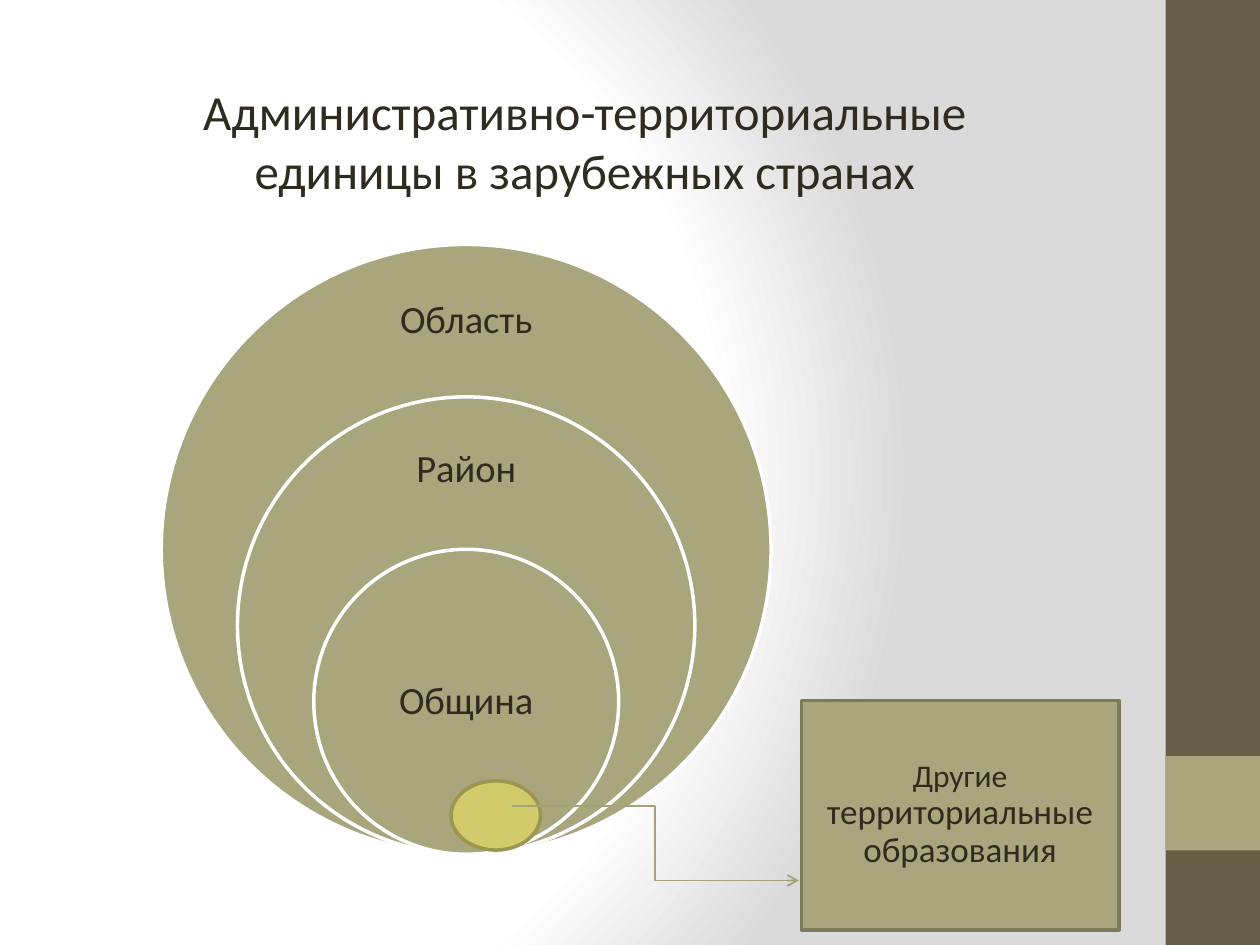
"""Slide with nested circles of administrative units and a linked note."""
from pptx import Presentation
from pptx import util as u
from pptx.dml.color import RGBColor
from pptx.enum import shapes, text
from pptx.oxml import parse_xml
from pptx.oxml.ns import nsdecls, qn

COLS, ROWS = 100, 75
OLIVE, DARK, WHITE, INK = "A9A57C", "675E47", "FFFFFF", "2F2B20"
RECT, OVAL = shapes.MSO_SHAPE.RECTANGLE, shapes.MSO_SHAPE.OVAL


def cell(n):
    """Turn grid cells, a hundredth of the slide width each, into a length."""
    return u.Inches(n / 10)


def color(hex_text):
    """Make a colour from a hex string."""
    return RGBColor.from_string(hex_text)


def add_shape(s, kind, box, fill, line=None):
    """Add a flat preset shape with an optional 2 pt outline."""
    sp = s.shapes.add_shape(kind, *map(cell, box))
    sp.shadow.inherit = False
    sp.fill.solid()
    sp.fill.fore_color.rgb = color(fill)
    if line:
        sp.line.color.rgb = color(line)
        sp.line.width = u.Pt(2)
    else:
        sp.line.fill.background()
    return sp


def write(sp, runs, inset, anchor=text.MSO_ANCHOR.MIDDLE, spacing=0.9):
    """Fill a shape with one centred paragraph of (text, size) runs."""
    tf = sp.text_frame
    frame = {f"margin_{side}": cell(inset) for side in ("left", "right", "top", "bottom")}
    frame.update(word_wrap=True, vertical_anchor=anchor)
    for name, value in frame.items():
        setattr(tf, name, value)
    p = tf.paragraphs[0]
    p.alignment = text.PP_ALIGN.CENTER
    p.line_spacing = spacing
    for words, size in runs:
        r = p.add_run()
        r.text = words
        for name, value in {"name": "Calibri", "size": u.Pt(size)}.items():
            setattr(r.font, name, value)
        r.font.color.rgb = color(INK)


def background(s):
    """Give the slide a circular white to grey gradient."""
    stops = "".join(
        f'<a:gs pos="{pos}000"><a:srgbClr val="{c}"/></a:gs>'
        for pos, c in ((0, WHITE), (75, WHITE), (100, "DADADA")))
    s.element.cSld.insert(0, parse_xml(
        f'<p:bg {nsdecls("p", "a")}><p:bgPr><a:gradFill rotWithShape="1">'
        f'<a:gsLst>{stops}</a:gsLst><a:path path="circle">'
        '<a:fillToRect l="20000" t="50000" r="100000" b="50000"/></a:path>'
        '</a:gradFill><a:effectLst/></p:bgPr></p:bg>'))


def side_band(s, x, y, w, h):
    """Draw the dark side band and its light square."""
    add_shape(s, RECT, (x, y, w, h), DARK)
    add_shape(s, RECT, (x, y + 0.8 * h, w, w), OLIVE)


def title(s, x, y, w, h):
    """Place and format the title placeholder."""
    sp = s.shapes.title
    for name, value in zip(("left", "top", "width", "height"), (x, y, w, h)):
        setattr(sp, name, cell(value))
    write(sp, [("Административно-территориальные единицы в зарубежных странах", 28)],
          0.5, text.MSO_ANCHOR.TOP, 1)


def nested_circles(s, x, y, size):
    """Stack labelled circles that shrink by a quarter and share a bottom point."""
    levels = (("Область", 0.05, 0.15), ("Район", 0.05, 0.14), ("Община", 0.125, 0.25))
    for i, (label, drop, high) in enumerate(levels):
        d = size * (1 - i / 4)
        top = y + size - d
        add_shape(s, OVAL, (x + (size - d) / 2, top, d, d), OLIVE, WHITE)
        w = 0.35 * size
        sp = s.shapes.add_textbox(*map(cell, (x + (size - w) / 2, top + drop * size, w, high * size)))
        write(sp, [(label, 22)], 1.7)


def note(s, x, y, w, h):
    """Draw the small oval, the note box and the bent arrow between them."""
    add_shape(s, OVAL, (x, y + 0.35 * h, 7.1, 5.5), "D2CB6C", "9B9650")
    c = s.shapes.add_connector(
        shapes.MSO_CONNECTOR.ELBOW,
        *map(cell, (x + 4.8, y + 0.46 * h, x + 27.6, y + 0.785 * h)))
    c.line.color.rgb = color("A6A278")
    c.line.width = u.Pt(1)
    c.line._get_or_add_ln().append(parse_xml(f'<a:tailEnd {nsdecls("a")} type="arrow"/>'))
    c._element.spPr.append(c._element.spPr.makeelement(qn("a:effectLst"), {}))
    sp = add_shape(s, RECT, (x + 27.8, y, w - 27.8, h), OLIVE, "7D7A5C")
    write(sp, [("Другие ", 18), ("территориальные образования", 20)], 0.8)


def main():
    """Build the slide and save it."""
    prs = Presentation()
    prs.slide_width, prs.slide_height = cell(COLS), cell(ROWS)
    s = prs.slides.add_slide(prs.slide_layouts[5])
    background(s)
    side_band(s, 92.5, 0, 7.5, ROWS)
    title(s, 9.8, 6, 73.2, 10.4)
    nested_circles(s, 12.8, 19.4, 48.4)
    note(s, 35.8, 55.6, 53, 18.2)
    prs.save("out.pptx")


if __name__ == "__main__":
    main()
